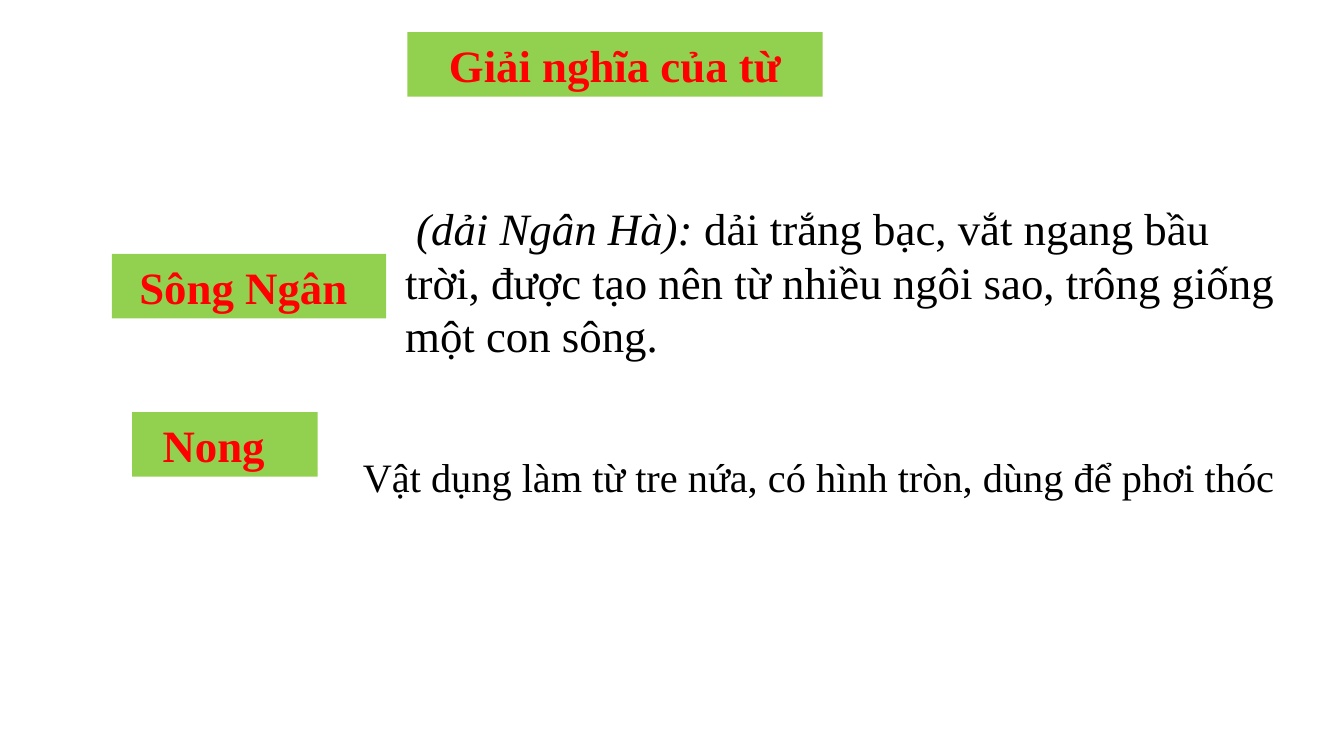
from pptx import Presentation
from pptx.dml.color import RGBColor
from pptx.enum.shapes import MSO_SHAPE
from pptx.enum.text import MSO_ANCHOR, PP_ALIGN
from pptx.util import Inches, Pt

RECTANGLE = MSO_SHAPE.RECTANGLE
CENTER, LEFT = PP_ALIGN.CENTER, PP_ALIGN.LEFT
MIDDLE, TOP = MSO_ANCHOR.MIDDLE, MSO_ANCHOR.TOP
FONT = "Times New Roman"
GREEN, RED, BLACK = "92D050", "FF0000", "000000"


def color(value):
    return RGBColor.from_string(value)


def add_run(paragraph, text, size, ink, bold=False, italic=False):
    run = paragraph.add_run()
    run.text = text
    run.font.name = FONT
    run.font.size = Pt(size)
    run.font.bold = bold
    run.font.italic = italic
    run.font.color.rgb = color(ink)


prs = Presentation()
prs.slide_width, prs.slide_height = Inches(13.33), Inches(7.5)
slide = prs.slides.add_slide(prs.slide_layouts[6])

# Green labels: text, left, top, width, right margin
labels = [
    ("Giải nghĩa của từ", 4.04, 0.32, 4.12, 0.1),
    ("Sông Ngân", 1.11, 2.52, 2.72, 0.21),
    ("Nong", 1.31, 4.09, 1.84, 0.32),
]
for text, left, top, width, right_margin in labels:
    label = slide.shapes.add_shape(
        RECTANGLE, Inches(left), Inches(top), Inches(width), Inches(0.64))
    label.shadow.inherit = False
    label.fill.solid()
    label.fill.fore_color.rgb = color(GREEN)
    label.line.fill.background()
    frame = label.text_frame
    frame.word_wrap = True
    frame.vertical_anchor = MIDDLE
    frame.margin_right = Inches(right_margin)
    frame.paragraphs[0].alignment = CENTER
    add_run(frame.paragraphs[0], text, 32, RED, bold=True)

# Definitions: left, top, width, height, first-line indent, size, (text, italic) pieces
definitions = [
    (3.92, 1.94, 9.01, 1.79, 0.11, 32, [
        ("(dải Ngân Hà): ", True),
        ("dải trắng bạc, vắt ngang bầu trời, được tạo nên từ nhiều ngôi sao, "
         "trông giống một con sông.", False),
    ]),
    (3.4, 4.44, 9.41, 0.58, 0.1, 28.8, [
        ("Vật dụng làm từ tre nứa, có hình tròn, dùng để phơi thóc", False),
    ]),
]
for left, top, width, height, indent, size, pieces in definitions:
    definition = slide.shapes.add_textbox(
        Inches(left), Inches(top), Inches(width), Inches(height))
    frame = definition.text_frame
    frame.word_wrap = True
    frame.vertical_anchor = TOP
    paragraph = frame.paragraphs[0]
    paragraph.alignment = LEFT
    paragraph._p.get_or_add_pPr().set("indent", str(Inches(indent)))
    for text, italic in pieces:
        add_run(paragraph, text, size, BLACK, italic=italic)

prs.save("out.pptx")
